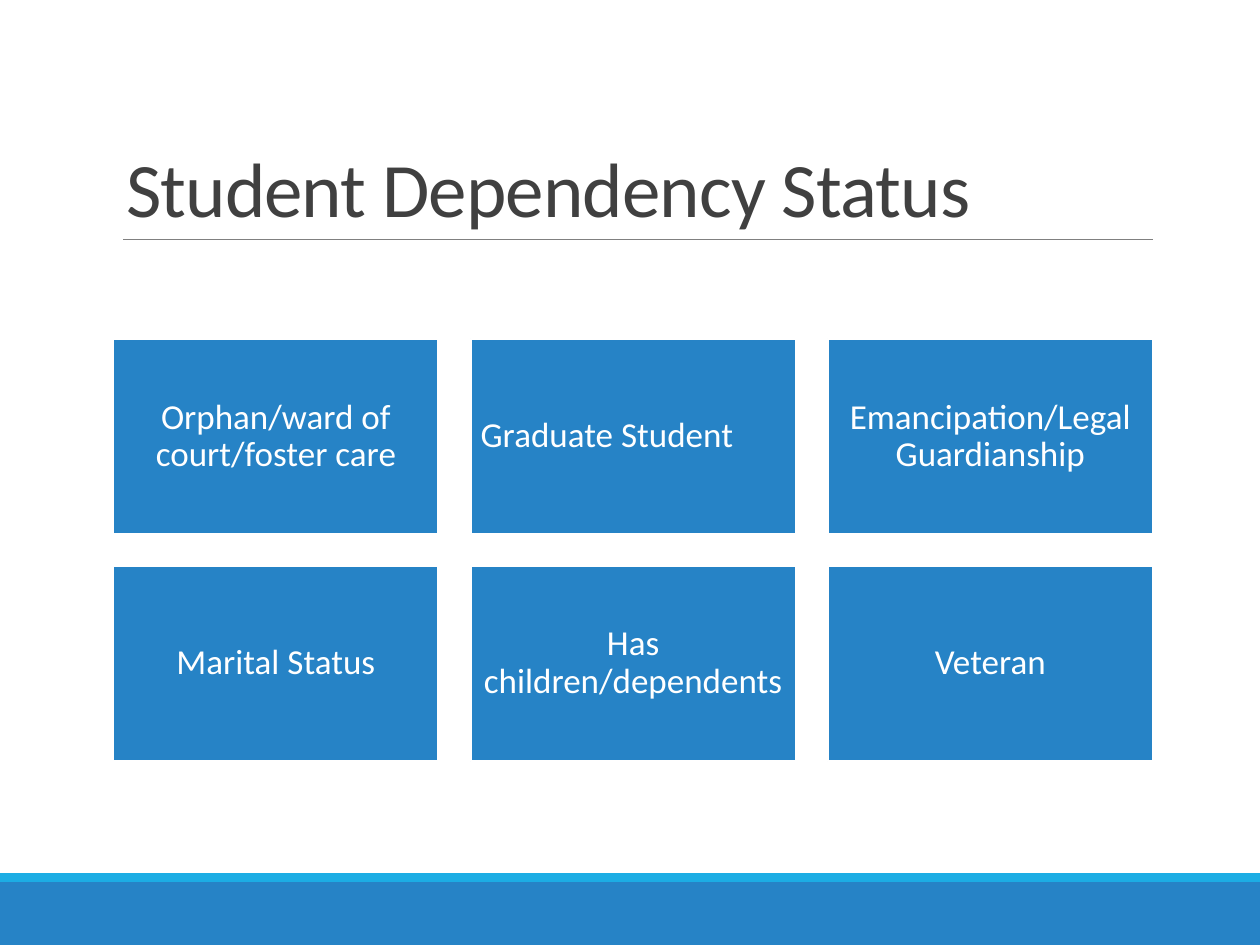
from dataclasses import dataclass

from pptx import Presentation
from pptx.dml.color import RGBColor
from pptx.enum.shapes import MSO_CONNECTOR, MSO_SHAPE
from pptx.enum.text import MSO_ANCHOR, MSO_AUTO_SIZE, PP_ALIGN
from pptx.oxml import parse_xml
from pptx.oxml.ns import nsdecls
from pptx.util import Inches, Pt


@dataclass(frozen=True)
class Theme:
    font: str = "Calibri"
    blue: RGBColor = RGBColor.from_string("2683C6")
    cyan: RGBColor = RGBColor.from_string("1CADE4")
    gray: RGBColor = RGBColor.from_string("808080")
    dark: RGBColor = RGBColor.from_string("404040")
    white: RGBColor = RGBColor.from_string("FFFFFF")
    title_size: float = 44
    tile_size: float = 20


THEME = Theme()
COLUMNS = 3
STATUSES = [
    ("Orphan/ward of court/foster care", PP_ALIGN.CENTER),
    ("Graduate Student", PP_ALIGN.LEFT),
    ("Emancipation/Legal Guardianship", PP_ALIGN.CENTER),
    ("Marital Status", PP_ALIGN.CENTER),
    ("Has children/dependents", PP_ALIGN.CENTER),
    ("Veteran", PP_ALIGN.CENTER),
]


def apply(target, values):
    for name, value in values.items():
        setattr(target, name, value)


def write(shape, text, size, color, frame_format, paragraph_format):
    frame = shape.text_frame
    frame.text = text
    apply(frame, {"word_wrap": True, "auto_size": MSO_AUTO_SIZE.NONE, **frame_format})
    paragraph = frame.paragraphs[0]
    apply(paragraph, paragraph_format)
    run = paragraph.runs[0]
    apply(run.font, {"name": THEME.font, "size": Pt(size)})
    run.font.color.rgb = color
    return run


def add_rectangle(slide, left, top, width, height, fill):
    shape = slide.shapes.add_shape(
        MSO_SHAPE.RECTANGLE, Inches(left), Inches(top), Inches(width), Inches(height))
    shape.shadow.inherit = False
    shape.fill.solid()
    shape.fill.fore_color.rgb = fill
    shape.line.fill.background()
    return shape


def add_footer_band(slide, left, top, width, height):
    stripe = 0.07
    add_rectangle(slide, left, top + stripe, width, height - stripe, THEME.blue)
    add_rectangle(slide, left, top, width, stripe, THEME.cyan)


def add_title(slide, left, top, width, height):
    """Place the title and the rule under it."""
    title = slide.shapes.title
    apply(title, {"left": Inches(left), "top": Inches(top),
                  "width": Inches(width), "height": Inches(height)})
    run = write(title, "Student Dependency Status", THEME.title_size, THEME.dark,
                {"vertical_anchor": MSO_ANCHOR.BOTTOM},
                {"alignment": PP_ALIGN.LEFT, "line_spacing": 0.85})
    run.font._element.set("spc", "-50")

    bottom = Inches(top + height)
    rule = slide.shapes.add_connector(
        MSO_CONNECTOR.STRAIGHT, Inches(left + 0.08), bottom, Inches(left + width), bottom)
    rule.line.color.rgb = THEME.gray
    rule.line.width = Pt(0.5)
    rule._element.spPr.append(parse_xml(f"<a:effectLst {nsdecls('a')}/>"))


def add_status_grid(slide, left, top, width, height):
    rows = len(STATUSES) // COLUMNS
    tile_width, tile_height = 2.58, 1.55
    step_x = (width - tile_width) / (COLUMNS - 1)
    step_y = (height - tile_height) / (rows - 1)
    margins = dict.fromkeys(
        ("margin_left", "margin_right", "margin_top", "margin_bottom"), Inches(0.08))

    for index, (text, alignment) in enumerate(STATUSES):
        row, column = divmod(index, COLUMNS)
        tile = add_rectangle(slide, left + column * step_x, top + row * step_y,
                             tile_width, tile_height, THEME.blue)
        tile.line.color.rgb = THEME.white
        tile.line.width = Pt(1.25)
        write(tile, text, THEME.tile_size, THEME.white,
              {"vertical_anchor": MSO_ANCHOR.MIDDLE, **margins},
              {"alignment": alignment, "line_spacing": 0.9})


def main():
    presentation = Presentation()
    presentation.slide_width = Inches(10)
    presentation.slide_height = Inches(7.5)
    title_only = presentation.slide_layouts[5]
    slide = presentation.slides.add_slide(title_only)
    add_footer_band(slide, 0, 6.93, 10, 0.57)
    add_title(slide, 0.9, 0.31, 8.25, 1.59)
    add_status_grid(slide, 0.9, 2.69, 8.25, 3.35)
    presentation.save("out.pptx")


if __name__ == "__main__":
    main()
